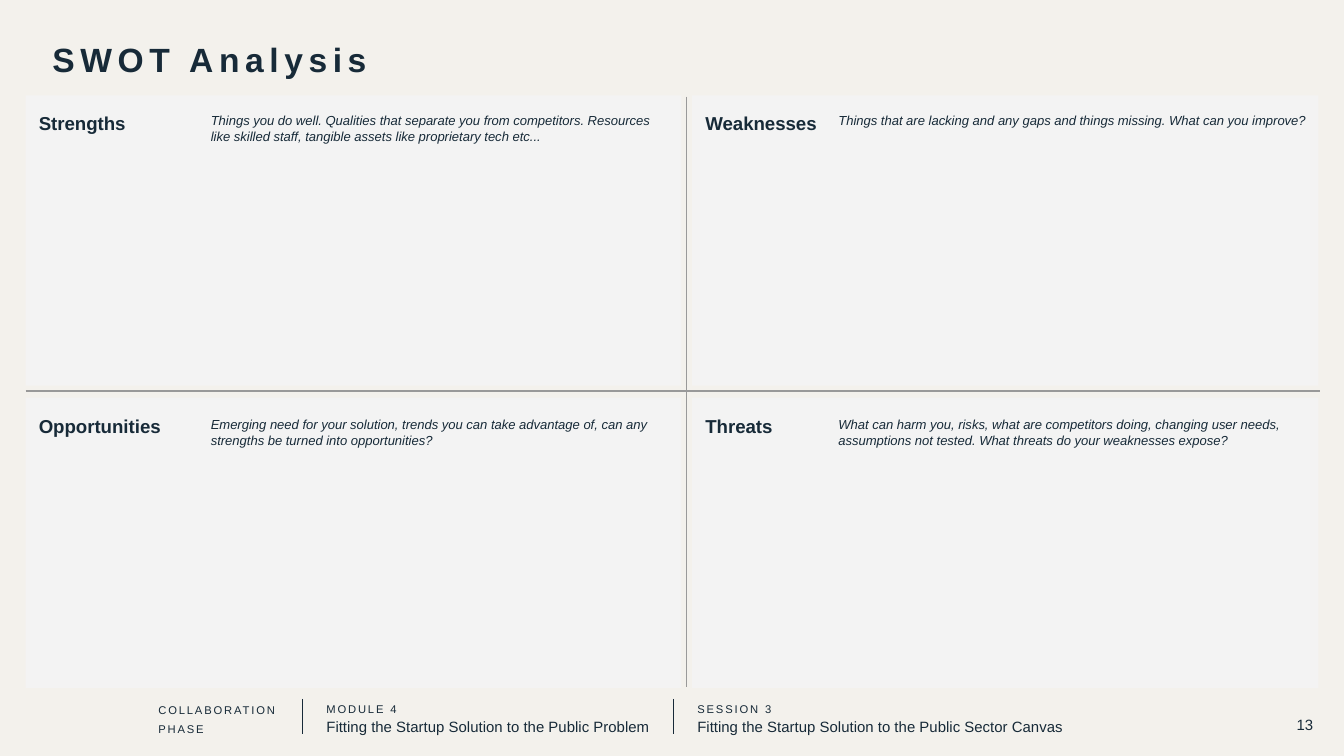
import dataclasses

import pptx
import pptx.dml.color
import pptx.enum.shapes
import pptx.enum.text
import pptx.oxml.ns
import pptx.util
from lxml import etree

Inches = pptx.util.Inches
Pt = pptx.util.Pt
Align = pptx.enum.text.PP_ALIGN
Anchor = pptx.enum.text.MSO_ANCHOR


@dataclasses.dataclass(frozen=True)
class Theme:
    font: str = "Arial"
    ink: str = "172A38"
    paper: str = "F3F1EC"
    panel: str = "F3F3F3"
    rule: str = "999999"
    title: float = 18
    heading: float = 10
    body: float = 8
    hint: float = 7
    label: float = 6


THEME = Theme()
WIDTH = 10
HEIGHT = WIDTH * 9 / 16
COLUMNS = ((0.19, 4.88), (5.15, 4.66))
ROWS = (0.71, 2.96)
PANEL_HEIGHT = 2.16
HINT_LEFT = (1.47, 6.14)
HINT_TOP = (0.74, 3)
HINT_WIDTH, HINT_HEIGHT = 3.58, 0.38
WIDE_HINT = 3.7
FOOTER_TOP, FOOTER_HEIGHT = 5.08, 0.47
FOOTER_RULE = (5.2, 5.46)

QUADRANTS = (
    (0, 0, "Strengths", HINT_WIDTH,
     "Things you do well. Qualities that separate you from competitors. "
     "Resources like skilled staff, tangible assets like proprietary tech etc..."),
    (0, 1, "Opportunities", HINT_WIDTH,
     "Emerging need for your solution, trends you can take advantage of, "
     "can any strengths be turned into opportunities?"),
    (1, 0, "Weaknesses", WIDE_HINT,
     "Things that are lacking and any gaps and things missing. "
     "What can you improve?"),
    (1, 1, "Threats", HINT_WIDTH,
     "What can harm you, risks, what are competitors doing, changing user needs, "
     "assumptions not tested. What threats do your weaknesses expose?"),
)
SECTIONS = (
    (2.33, 3.32, "MODULE 4", "Fitting the Startup Solution to the Public Problem"),
    (5.09, 2.99, "SESSION 3", "Fitting the Startup Solution to the Public Sector Canvas"),
)


def color(value):
    return pptx.dml.color.RGBColor.from_string(value)


def style(para, size, bold=False, italic=False, tracking=0, spacing=None, align=Align.LEFT):
    para.alignment = align
    if spacing is not None:
        para.line_spacing = spacing
    for span in para.runs:
        span.font.name = THEME.font
        span.font.size = Pt(size)
        span.font.bold = bold
        span.font.italic = italic
        span.font.color.rgb = color(THEME.ink)
        if tracking:
            span.font._element.set("spc", str(tracking * 100))


def fill_frame(shape, text, anchor=Anchor.TOP):
    frame = shape.text_frame
    frame.text = text
    frame.word_wrap = True
    frame.auto_size = pptx.enum.text.MSO_AUTO_SIZE.NONE
    frame.vertical_anchor = anchor
    frame.margin_left = frame.margin_right = Inches(0.1)
    frame.margin_top = frame.margin_bottom = Inches(0.1)
    return frame.paragraphs


def add_text(page, place, text, anchor=Anchor.TOP):
    box = page.shapes.add_textbox(*map(Inches, place))
    return fill_frame(box, text, anchor)


def add_rule(page, start, end, tint, weight):
    rule = page.shapes.add_connector(
        pptx.enum.shapes.MSO_CONNECTOR.STRAIGHT, *map(Inches, start + end))
    rule.line.color.rgb = color(tint)
    rule.line.width = Pt(weight)
    etree.SubElement(rule._element.spPr, pptx.oxml.ns.qn("a:effectLst"))


def add_footer(page):
    phase = add_text(page, (1.08, 5.09, 1.15, FOOTER_HEIGHT), "COLLABORATION\nPHASE")
    for para in phase:
        style(para, THEME.label, tracking=1, spacing=Pt(10.2))
    for left, width, label, topic in SECTIONS:
        rule_x = left - 0.08
        add_rule(page, (rule_x, FOOTER_RULE[0]), (rule_x, FOOTER_RULE[1]), THEME.ink, 0.5)
        first, second = add_text(
            page, (left, FOOTER_TOP, width, FOOTER_HEIGHT), f"{label}\n{topic}")
        style(first, THEME.label, tracking=1, spacing=Pt(10.6))
        style(second, THEME.body, spacing=Pt(10.6))
    number = add_text(page, (9.27, 5.25, 0.6, 0.28), "13", Anchor.MIDDLE)
    style(number[0], THEME.body, align=Align.RIGHT)


def add_title(page, text):
    title = page.shapes.title
    title.left, title.top, title.width, title.height = map(Inches, (0.29, 0.19, 5.06, 0.47))
    style(fill_frame(title, text)[0], THEME.title, bold=True, tracking=3)


def add_panel(page, column, row, heading):
    left, width = COLUMNS[column]
    panel = page.shapes.add_shape(
        pptx.enum.shapes.MSO_SHAPE.RECTANGLE,
        *map(Inches, (left, ROWS[row], width, PANEL_HEIGHT)))
    panel.shadow.inherit = False
    panel.fill.solid()
    panel.fill.fore_color.rgb = color(THEME.panel)
    panel.line.fill.background()
    style(fill_frame(panel, heading)[0], THEME.heading, bold=True, spacing=1.15)


def add_hint(page, column, row, width, text):
    place = (HINT_LEFT[column], HINT_TOP[row], width, HINT_HEIGHT)
    style(add_text(page, place, text)[0], THEME.hint, italic=True)


def main():
    deck = pptx.Presentation()
    deck.slide_width, deck.slide_height = Inches(WIDTH), Inches(HEIGHT)
    page = deck.slides.add_slide(deck.slide_layouts.get_by_name("Title Only"))
    page.background.fill.solid()
    page.background.fill.fore_color.rgb = color(THEME.paper)
    add_title(page, "SWOT Analysis")
    add_footer(page)
    for column, row, heading, width, hint in QUADRANTS:
        add_panel(page, column, row, heading)
        add_hint(page, column, row, width, hint)
    add_rule(page, (5.11, 0.72), (5.11, 5.11), THEME.rule, 0.75)
    add_rule(page, (0.19, 2.91), (9.82, 2.91), THEME.rule, 0.75)
    deck.save("out.pptx")


if __name__ == "__main__":
    main()
